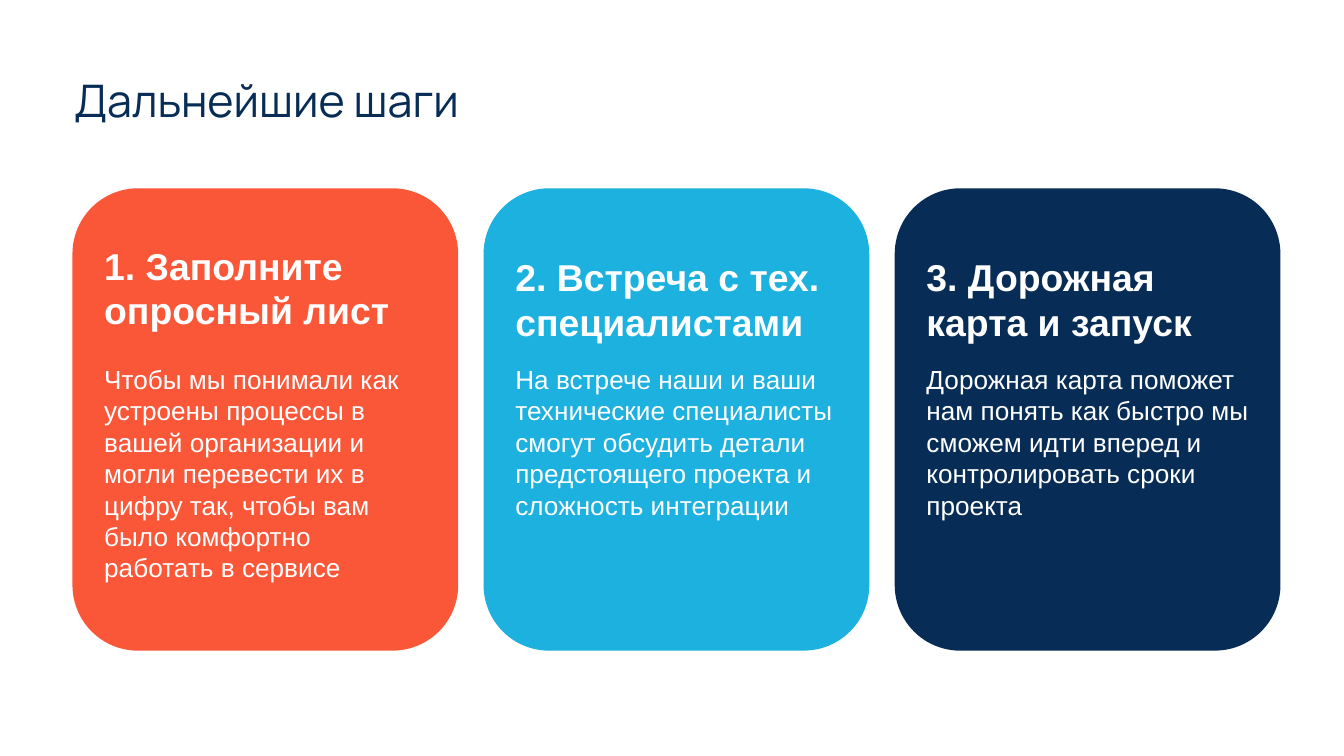
import pptx
import pptx.util
import pptx.dml.color
import pptx.enum.shapes
import pptx.enum.text

Cm = pptx.util.Cm

# Content
COLORS = {"orange": "FA5739", "sky": "1DB1DF", "navy": "072D56", "white": "FFFFFF"}
TITLE = "Дальнейшие шаги"
# Card colour, heading, heading top (cm), body
STEPS = [
    ("orange", "1. Заполните опросный лист", 4.34,
     "Чтобы мы понимали как устроены процессы в вашей организации и могли "
     "перевести их в цифру так, чтобы вам было комфортно работать в сервисе"),
    ("sky", "2. Встреча с тех. специалистами", 4.55,
     "На встрече наши и ваши технические специалисты смогут обсудить детали "
     "предстоящего проекта и сложность интеграции"),
    ("navy", "3. Дорожная карта и запуск", 4.55,
     "Дорожная карта поможет нам понять как быстро мы сможем идти вперед и "
     "контролировать сроки проекта"),
]

# Layout in centimetres
CARD_LEFT, CARD_TOP, CARD_WIDTH, CARD_HEIGHT = 1.37, 3.56, 7.29, 8.74
CARD_PITCH = 7.77
TEXT_OFFSET = 0.35
BODY_TOP = 6.62


def color(name):
    return pptx.dml.color.RGBColor.from_string(COLORS[name])


def add_text(page, text, place, size, font="Arial", ink="white", bold=False,
             inset=(0.25, 0.25)):
    box = page.shapes.add_textbox(*[Cm(value) for value in place])
    frame = box.text_frame
    frame.word_wrap = True
    frame.margin_left = frame.margin_right = Cm(inset[0])
    frame.margin_top = frame.margin_bottom = Cm(inset[1])
    frame.text = text
    span = frame.paragraphs[0].runs[0]
    span.font.name = font
    span.font.size = pptx.util.Pt(size)
    span.font.bold = bold
    span.font.color.rgb = color(ink)
    return box


def add_card(page, left, fill):
    card = page.shapes.add_shape(
        pptx.enum.shapes.MSO_SHAPE.ROUNDED_RECTANGLE,
        Cm(left), Cm(CARD_TOP), Cm(CARD_WIDTH), Cm(CARD_HEIGHT))
    card.adjustments[0] = 0.17
    card.shadow.inherit = False
    card.fill.solid()
    card.fill.fore_color.rgb = color(fill)
    card.line.fill.background()


def main():
    deck = pptx.Presentation()
    deck.slide_width, deck.slide_height = Cm(25.4), Cm(14.29)
    page = deck.slides.add_slide(deck.slide_layouts[6])

    # Title
    title = add_text(page, TITLE, (1.22, 0.2, 21.56, 3.48), 24, "Manrope", "navy",
                     inset=(0.18, 0.1))
    title.text_frame.vertical_anchor = pptx.enum.text.MSO_ANCHOR.MIDDLE
    title.text_frame.paragraphs[0].line_spacing = 0.9

    # Step cards
    for index, (fill, heading, heading_top, body) in enumerate(STEPS):
        left = CARD_LEFT + index * CARD_PITCH
        text_left = left + TEXT_OFFSET
        add_card(page, left, fill)
        add_text(page, heading, (text_left, heading_top, 6.7, 2.08), 20, bold=True)
        add_text(page, body, (text_left, BODY_TOP, 6.6, 5.3), 14)

    deck.save("out.pptx")


if __name__ == "__main__":
    main()
